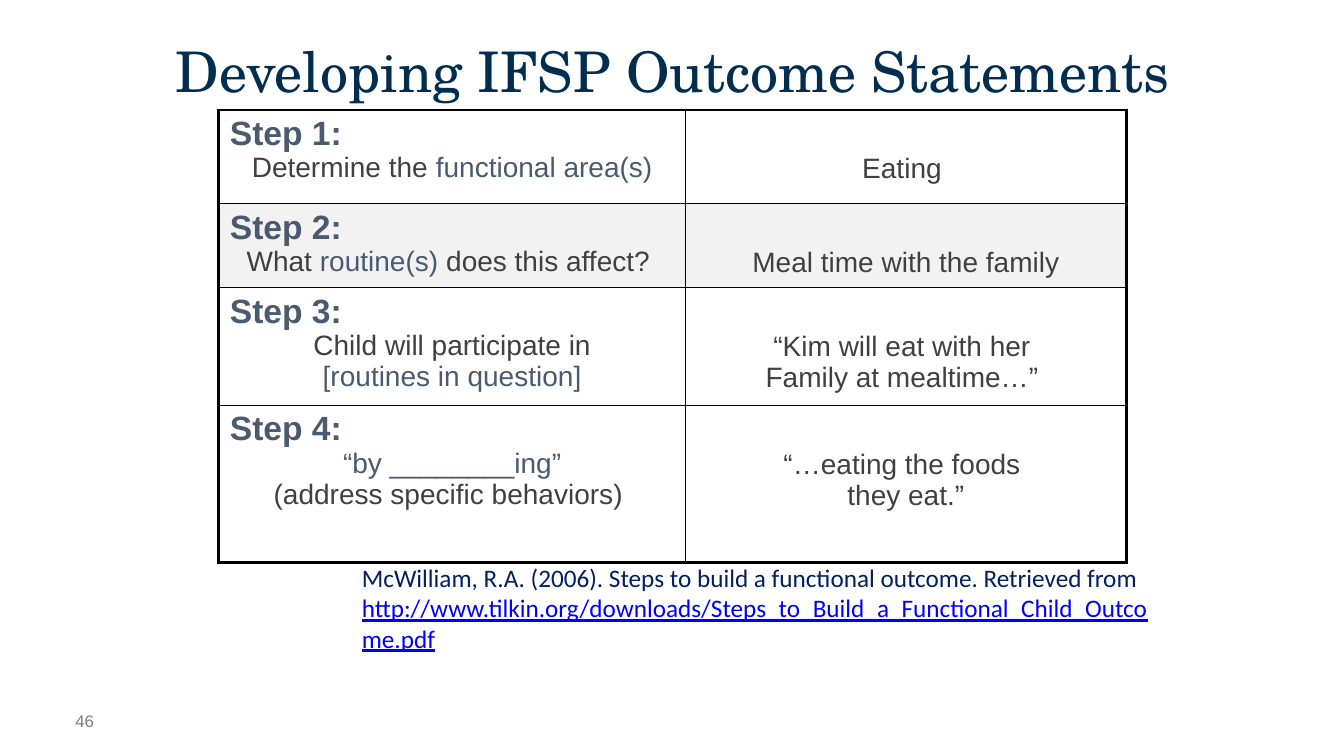
"""Build a slide with a four-step table for writing IFSP outcome statements."""
from dataclasses import dataclass
from lxml.etree import SubElement as Sub
from pptx import Presentation
from pptx.dml.color import RGBColor as Rgb
from pptx.enum.text import MSO_ANCHOR as Anchor, PP_ALIGN as Align
from pptx.oxml.ns import qn
from pptx.util import Pt

TITLE = "Developing IFSP Outcome Statements"
PAGE = "46"
STEPS = [
    ("Step 1:",
     [[("Determine the ", "body"), ("functional area(s)", "key")]],
     ["Eating "]),
    ("Step 2:",
     [[("What ", "body"), ("routine(s) ", "key"), ("does this affect? ", "body")]],
     ["Meal time with the family"]),
    ("Step 3:",
     [[("Child will participate in", "body")], [("[routines in question]", "key")]],
     ["“Kim will eat with her ", "Family at mealtime…” "]),
    ("Step 4:",
     [[("“by ________ing”", "key")], [("(address specific behaviors) ", "body")]],
     ["“…eating the foods ", "they eat.”"]),
]
CITE = "McWilliam, R.A. (2006). Steps to build a functional outcome. Retrieved from"
LINK = ["http://www.tilkin.org/downloads/Steps_to_Build_a_Functional_Child_Outco",
        "me.pdf"]

PX = 9144
WIDE, HIGH = 1333, 750
COLS = [463, 437]
ROWS = [93, 82, 115, 156]
PAD, EDGE, DROP = 11, 5, 43


@dataclass(frozen=True)
class Theme:
    """Hold the colours, fonts and type sizes."""
    title: str = "002D50"
    key: str = "4B5A6F"
    body: str = "404040"
    cite: str = "002060"
    link: str = "0000FF"
    page: str = "7F7F7F"
    band: str = "F2F2F2"
    rule: str = "000000"
    serif: str = "TeX Gyre Schola"
    sans: str = "Arial"
    text: str = "Calibri"
    huge: int = 40
    head: int = 24
    main: int = 20
    note: int = 18
    tiny: int = 12
    thick: float = 2.25
    thin: float = 1


LOOK = Theme()


def say(para, text, tone="body", face=LOOK.sans, size=LOOK.main, bold=False,
        line=False, align=Align.LEFT):
    """Add one formatted run to a paragraph."""
    para.alignment = align
    run = para.add_run()
    run.text = text
    font = run.font
    font.name, font.size = face, Pt(size)
    font.bold, font.underline = bold, line
    font.color.rgb = Rgb.from_string(getattr(LOOK, tone))


def box(slide, x, y, w, h, anchor=Anchor.MIDDLE):
    """Add a wrapping text box and return its first paragraph."""
    frame = slide.shapes.add_textbox(x * PX, y * PX, w * PX, h * PX).text_frame
    frame.word_wrap = True
    frame.vertical_anchor = anchor
    return frame.paragraphs[0]


def rule(cell, row, col):
    """Draw cell borders, thick along the rim of the table."""
    rims = {"L": col == 0, "R": col == len(COLS) - 1,
            "T": row == 0, "B": row == len(ROWS) - 1}
    props = cell._tc.get_or_add_tcPr()
    for side, rim in rims.items():
        width = Pt(LOOK.thick if rim else LOOK.thin)
        line = Sub(props, qn(f"a:ln{side}"), w=str(width))
        Sub(Sub(line, qn("a:solidFill")), qn("a:srgbClr"), val=LOOK.rule)


def dress(cell, row, col):
    """Set the margins, borders and fill of a cell."""
    cell.margin_left = cell.margin_right = PAD * PX
    cell.margin_top = (DROP if col else EDGE) * PX
    cell.margin_bottom = EDGE * PX
    rule(cell, row, col)
    if row == 1:
        cell.fill.solid()
        cell.fill.fore_color.rgb = Rgb.from_string(LOOK.band)
    else:
        cell.fill.background()


def grid(slide, x, y):
    """Add the table of steps and examples."""
    table = slide.shapes.add_table(len(ROWS), len(COLS), x * PX, y * PX,
                                   sum(COLS) * PX, sum(ROWS) * PX).table
    table.first_row = table.horz_banding = False
    for col, width in zip(table.columns, COLS):
        col.width = width * PX
    for row, height in zip(table.rows, ROWS):
        row.height = height * PX
    for row, (step, task, case) in enumerate(STEPS):
        left, right = table.cell(row, 0), table.cell(row, 1)
        dress(left, row, 0)
        dress(right, row, 1)
        say(left.text_frame.paragraphs[0], step, "key", size=LOOK.head, bold=True)
        for runs in task:
            para = left.text_frame.add_paragraph()
            for text, tone in runs:
                say(para, text, tone, align=Align.CENTER)
        frame = right.text_frame
        for num, text in enumerate(case):
            para = frame.add_paragraph() if num else frame.paragraphs[0]
            say(para, text, align=Align.CENTER)


def main():
    """Build and save the slide."""
    deck = Presentation()
    deck.slide_width, deck.slide_height = WIDE * PX, HIGH * PX
    slide = deck.slides.add_slide(deck.slide_layouts[6])
    say(box(slide, 65, 695, 57, 40), PAGE, "page", size=LOOK.tiny)
    grid(slide, 217, 109)
    say(box(slide, 67, 30, 1200, 79), TITLE, "title", LOOK.serif, LOOK.huge,
        align=Align.CENTER)
    para = box(slide, 349, 553, 818, 101, Anchor.TOP)
    say(para, CITE, "cite", LOOK.text, LOOK.note)
    for part in LINK:
        para.add_line_break()
        say(para, part, "link", LOOK.text, LOOK.note, line=True)
    deck.save("out.pptx")


if __name__ == "__main__":
    main()
